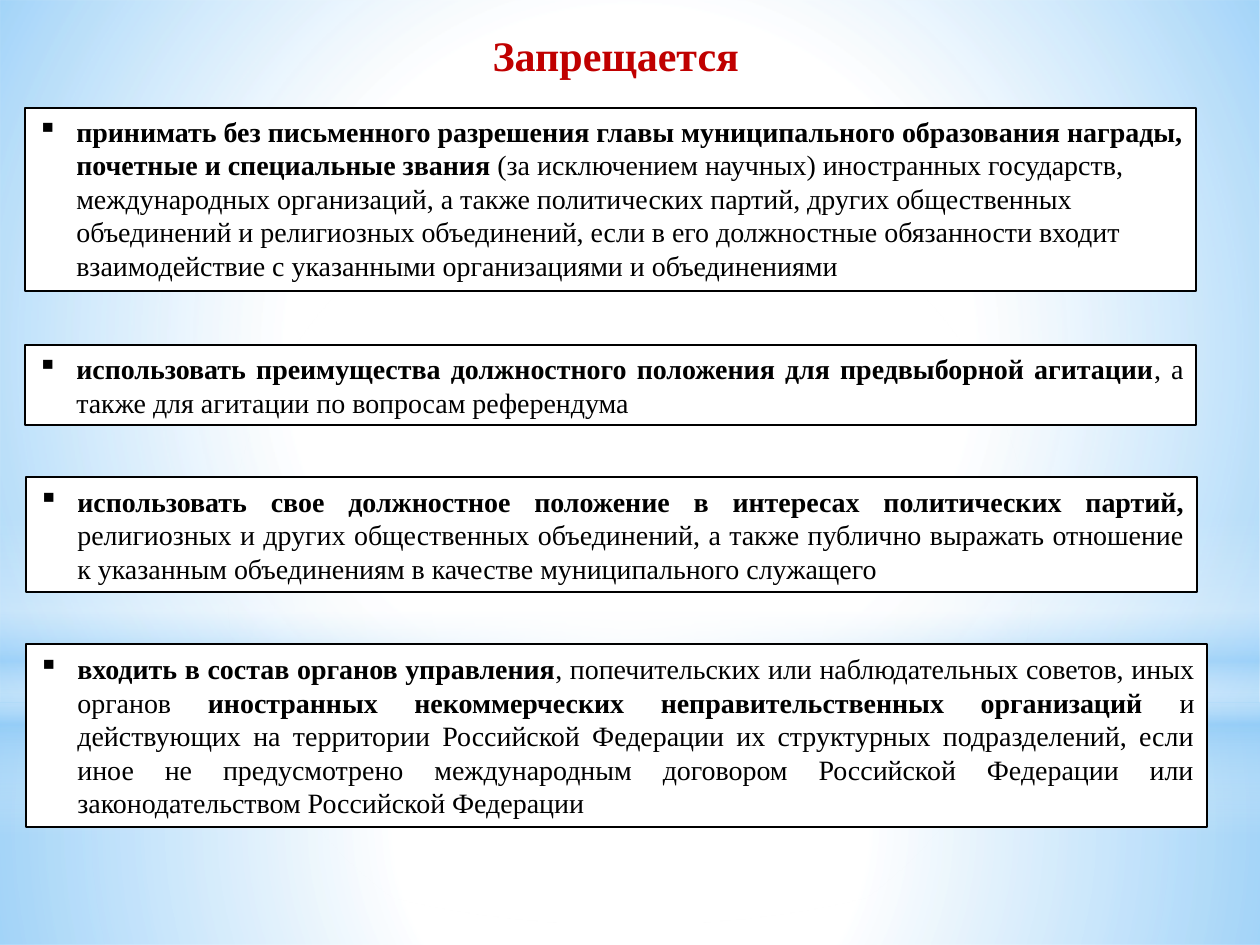
from dataclasses import dataclass

from lxml import etree
from pptx import Presentation
from pptx.dml.color import RGBColor
from pptx.enum.shapes import MSO_SHAPE
from pptx.enum.text import MSO_ANCHOR, PP_ALIGN
from pptx.oxml.ns import qn
from pptx.util import Emu, Pt

RECTANGLE, OVAL = MSO_SHAPE.RECTANGLE, MSO_SHAPE.OVAL
TOP, MIDDLE = MSO_ANCHOR.TOP, MSO_ANCHOR.MIDDLE
LEFT, JUSTIFY = PP_ALIGN.LEFT, PP_ALIGN.JUSTIFY


@dataclass(frozen=True)
class Theme:
    font: str = "Times New Roman"
    title_size: int = 24
    body_size: int = 16
    title: str = "C00000"
    text: str = "000000"
    white: str = "FFFFFF"
    sky: str = "8BC9F7"
    line_width: float = 1.25


THEME = Theme()
PX_PER_INCH = 126
SLIDE_SIZE = (1260, 945)
INDENT = 39

TITLE = "Запрещается"
TITLE_BOX = (480, 23, 275, 63)

# Each prohibition: box, alignment, anchor, then (text, bold) runs
PROHIBITIONS = [
    ((25, 108, 1171, 183), LEFT, TOP, [
        ("принимать без письменного разрешения главы муниципального образования "
         "награды, почетные и специальные звания ", True),
        ("(за исключением научных) иностранных государств, международных организаций, "
         "а также политических партий, других общественных объединений и религиозных "
         "объединений, если в его должностные обязанности входит взаимодействие "
         "с указанными организациями и объединениями", False)]),
    ((25, 345, 1171, 80), JUSTIFY, MIDDLE, [
        ("использовать преимущества должностного положения для предвыборной агитации",
         True),
        (", а также для агитации по вопросам референдума", False)]),
    ((26, 477, 1171, 115), JUSTIFY, MIDDLE, [
        ("использовать свое должностное положение в интересах политических партий,",
         True),
        (" религиозных и других общественных объединений, а также публично выражать "
         "отношение к указанным объединениям в качестве муниципального служащего",
         False)]),
    ((26, 644, 1181, 183), JUSTIFY, MIDDLE, [
        ("входить в состав органов управления", True),
        (", попечительских или наблюдательных советов, иных органов ", False),
        ("иностранных некоммерческих неправительственных организаций ", True),
        ("и действующих на территории Российской Федерации их структурных "
         "подразделений, если иное не предусмотрено международным договором "
         "Российской Федерации или законодательством Российской Федерации", False)]),
]

# Each glow: preset, box, angle (None is radial), then (position %, colour, opacity %)
W, S = THEME.white, THEME.sky
GLOWS = [
    (RECTANGLE, (0, 703, 1260, 242), None, [(0, W, 91), (37, W, 76), (100, S, 79)]),
    (RECTANGLE, (0, 0, 1260, 703), None, [(0, W, 89), (48, W, 62), (100, S, 79)]),
    (RECTANGLE, (0, 519, 1260, 315), 90,
     [(0, W, 0), (29, W, 30), (45, S, 40), (55, W, 26), (65, S, 60), (100, W, 0)]),
    (OVAL, (0, 220, 1260, 703), None, [(0, W, 100), (56, W, 0)]),
]


def px(value):
    return Emu(round(value * 914400 / PX_PER_INCH))


def add_panel(slide, preset, box):
    shape = slide.shapes.add_shape(preset, *map(px, box))
    shape.shadow.inherit = False
    return shape


def style_font(font, size, color, bold):
    font.name = THEME.font
    font.size = Pt(size)
    font.color.rgb = RGBColor.from_string(color)
    font.bold = bold


def set_gradient(shape, angle, stops):
    """Fill with a gradient whose stops carry their own opacity."""
    shape.fill.background()
    properties = shape._element.spPr
    gradient = etree.Element(qn("a:gradFill"), rotWithShape="1")
    stop_list = etree.SubElement(gradient, qn("a:gsLst"))
    for position, color, opacity in stops:
        stop = etree.SubElement(stop_list, qn("a:gs"), pos=str(position * 1000))
        rgb = etree.SubElement(stop, qn("a:srgbClr"), val=color)
        etree.SubElement(rgb, qn("a:alpha"), val=str(opacity * 1000))
    if angle is None:
        radial = etree.SubElement(gradient, qn("a:path"), path="circle")
        etree.SubElement(radial, qn("a:fillToRect"),
                         {side: "50000" for side in "ltrb"})
    else:
        etree.SubElement(gradient, qn("a:lin"), ang=str(angle * 60000), scaled="0")
    properties.replace(properties.find(qn("a:noFill")), gradient)


def add_glow(slide, preset, box, angle, stops):
    shape = add_panel(slide, preset, box)
    set_gradient(shape, angle, stops)
    shape.line.fill.background()


def add_bullet(paragraph):
    properties = paragraph._p.get_or_add_pPr()
    properties.set("marL", str(px(INDENT)))
    properties.set("indent", str(-px(INDENT)))
    etree.SubElement(properties, qn("a:buChar"), char="▪")


def add_prohibition(slide, box, alignment, anchor, runs):
    shape = add_panel(slide, RECTANGLE, box)
    shape.fill.solid()
    shape.fill.fore_color.rgb = RGBColor.from_string(THEME.white)
    shape.line.color.rgb = RGBColor.from_string(THEME.text)
    shape.line.width = Pt(THEME.line_width)
    shape.text_frame.word_wrap = True
    shape.text_frame.vertical_anchor = anchor
    paragraph = shape.text_frame.paragraphs[0]
    paragraph.alignment = alignment
    add_bullet(paragraph)
    for text, bold in runs:
        run = paragraph.add_run()
        run.text = text
        style_font(run.font, THEME.body_size, THEME.text, bold)


def set_title(slide):
    title = slide.shapes.title
    title.left, title.top, title.width, title.height = map(px, TITLE_BOX)
    title.text_frame.text = TITLE
    title.text_frame.word_wrap = False
    title.text_frame.vertical_anchor = TOP
    paragraph = title.text_frame.paragraphs[0]
    paragraph.alignment = LEFT
    style_font(paragraph.runs[0].font, THEME.title_size, THEME.title, True)
    slide.shapes._spTree.append(title._element)  # bring in front of the glows


def main():
    presentation = Presentation()
    presentation.slide_width, presentation.slide_height = map(px, SLIDE_SIZE)
    slide = presentation.slides.add_slide(presentation.slide_layouts[5])
    for glow in GLOWS:
        add_glow(slide, *glow)
    set_title(slide)
    for prohibition in PROHIBITIONS:
        add_prohibition(slide, *prohibition)
    presentation.save("out.pptx")


if __name__ == "__main__":
    main()
